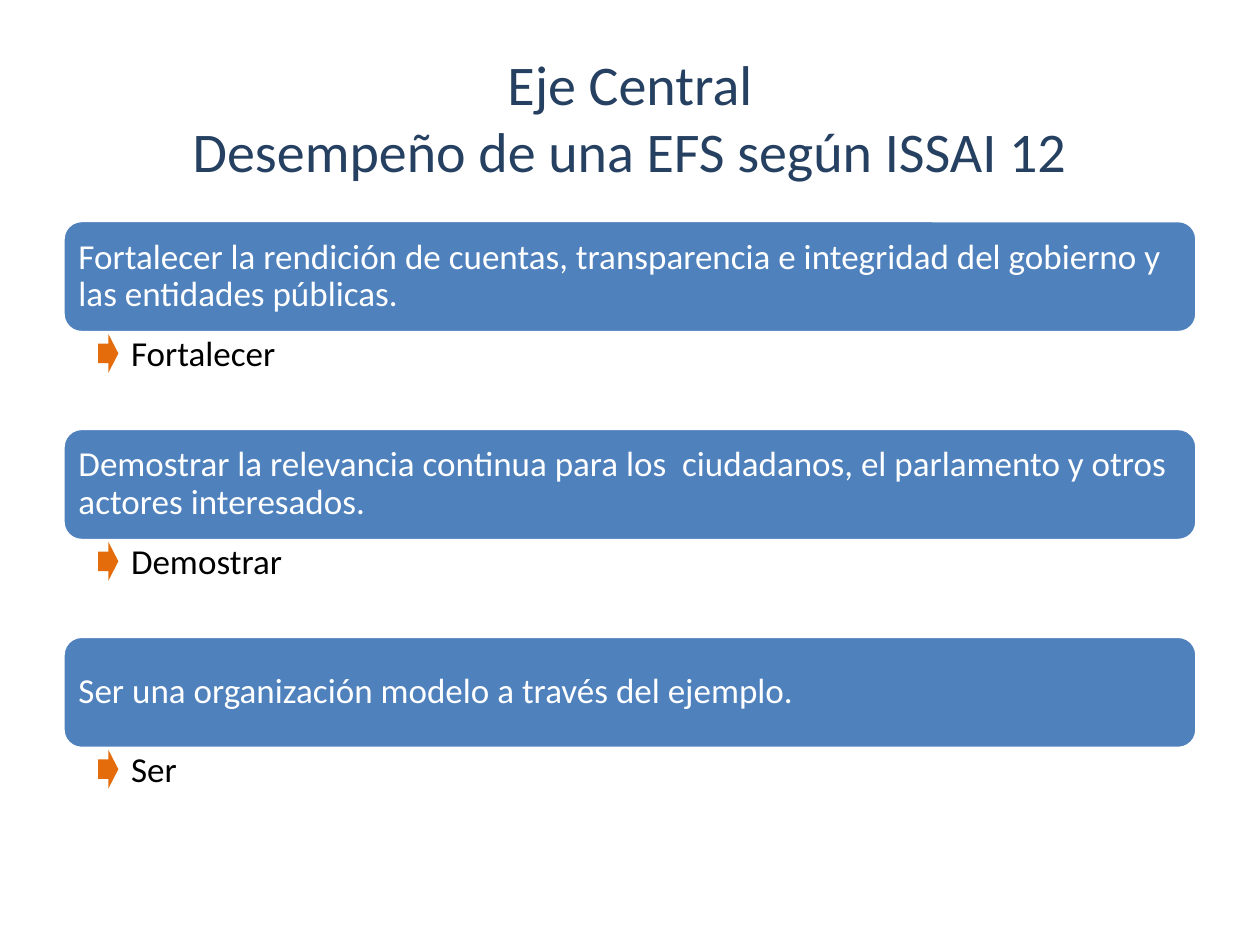
"""Build the slide on the performance of an audit institution under ISSAI 12."""
import pptx
import pptx.dml.color
import pptx.enum.shapes
import pptx.enum.text
import pptx.util

Inches = pptx.util.Inches
Pt = pptx.util.Pt
RGBColor = pptx.dml.color.RGBColor
Shape = pptx.enum.shapes.MSO_SHAPE
Anchor = pptx.enum.text.MSO_ANCHOR
Align = pptx.enum.text.PP_ALIGN

NAVY = RGBColor(0x25, 0x40, 0x61)
BLUE = RGBColor(0x4F, 0x81, 0xBD)
ORANGE = RGBColor(0xE4, 0x6C, 0x0A)
WHITE = RGBColor(0xFF, 0xFF, 0xFF)
BLACK = RGBColor(0x00, 0x00, 0x00)

LEFT, WIDTH = 0.5, 9
FIRST_ROW, ROW_PITCH = 1.75, 1.65
BAND_HEIGHT = 0.89
KEYWORD_HEIGHT = ROW_PITCH - BAND_HEIGHT

OBJECTIVES = [
    ("Fortalecer la rendición de cuentas, transparencia e integridad del gobierno y las entidades públicas.",
     "Fortalecer"),
    ("Demostrar la relevancia continua para los  ciudadanos, el parlamento y otros actores interesados.",
     "Demostrar"),
    ("Ser una organización modelo a través del ejemplo.", "Ser"),
]


def write(holder, text, size, color, anchor, align, insets, spacing=1.0):
    frame = holder.text_frame
    frame.word_wrap = True
    frame.vertical_anchor = anchor
    frame.margin_left, frame.margin_top, frame.margin_right, frame.margin_bottom = map(Inches, insets)
    paragraph = frame.paragraphs[0]
    paragraph.text = text
    paragraph.alignment = align
    paragraph.line_spacing = spacing
    for run in paragraph.runs:
        run.font.name = "Calibri"
        run.font.size = Pt(size)
        run.font.color.rgb = color


def add_preset(slide, preset, box, fill):
    preset_shape = slide.shapes.add_shape(preset, *map(Inches, box))
    preset_shape.shadow.inherit = False
    preset_shape.fill.solid()
    preset_shape.fill.fore_color.rgb = fill
    preset_shape.line.fill.background()
    return preset_shape


def add_title(slide, text):
    title = slide.shapes.add_textbox(*map(Inches, (LEFT, 0.3, WIDTH, 1.25)))
    write(title, text, 32, NAVY, Anchor.MIDDLE, Align.CENTER, (0.1, 0.05, 0.1, 0.05))


def add_band(slide, top, text):
    band = add_preset(slide, Shape.ROUNDED_RECTANGLE, (LEFT, top, WIDTH, BAND_HEIGHT), BLUE)
    band.line.color.rgb = WHITE
    band.line.width = Pt(2)
    write(band, text, 20, WHITE, Anchor.MIDDLE, Align.LEFT, (0.08,) * 4, 0.9)


def add_keyword(slide, top, text):
    keyword = slide.shapes.add_textbox(*map(Inches, (LEFT, top, WIDTH, KEYWORD_HEIGHT)))
    write(keyword, text, 20, BLACK, Anchor.TOP, Align.LEFT, (0.54, 0.03, 0.16, 0.03), 0.9)
    add_preset(slide, Shape.RIGHT_ARROW, (0.78, top + 0.01, 0.16, 0.31), ORANGE)


def main():
    deck = pptx.Presentation()
    deck.slide_width, deck.slide_height = Inches(10), Inches(7.5)
    slide = deck.slides.add_slide(deck.slide_layouts[6])
    add_title(slide, "Eje Central\vDesempeño de una EFS según ISSAI 12")
    for row, (objective, verb) in enumerate(OBJECTIVES):
        top = FIRST_ROW + row * ROW_PITCH
        add_band(slide, top, objective)
        add_keyword(slide, top + BAND_HEIGHT, verb)
    deck.save("out.pptx")


if __name__ == "__main__":
    main()
